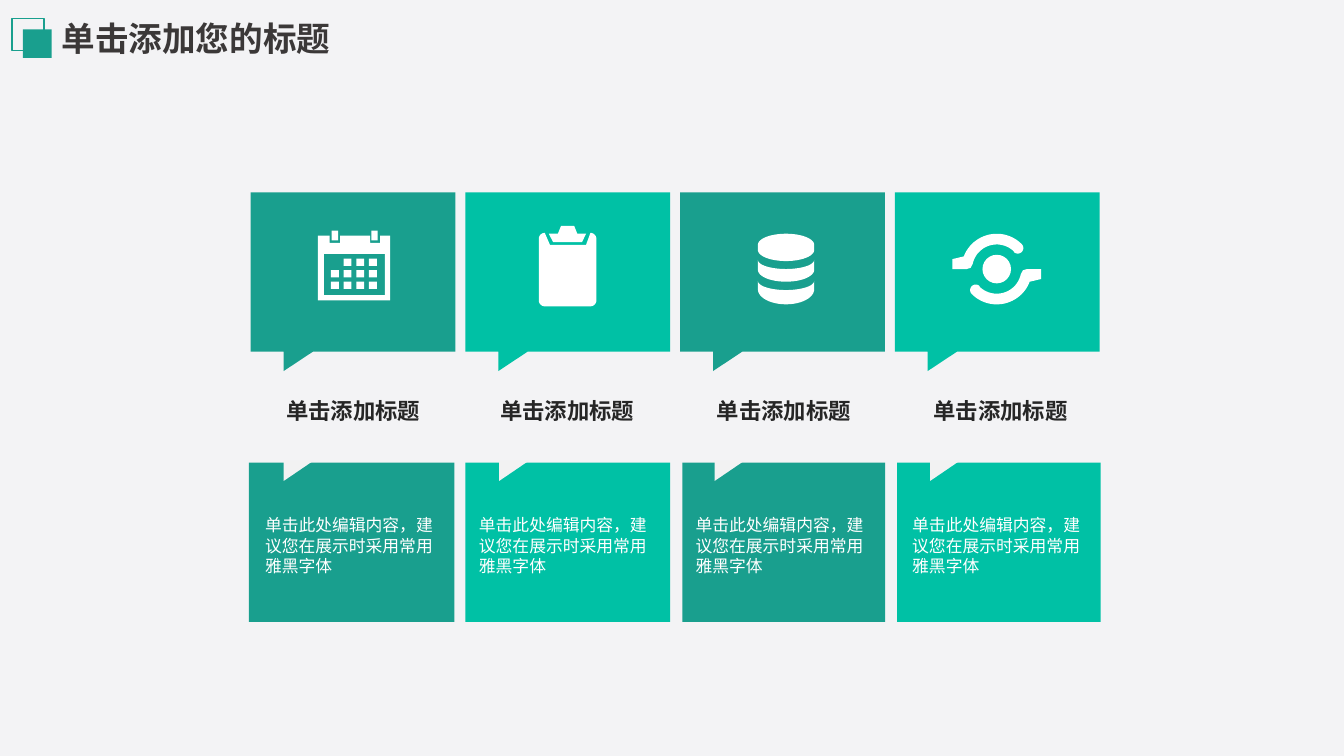
from math import cos, radians, sin

from pptx import Presentation
from pptx.dml.color import RGBColor
from pptx.enum.shapes import MSO_SHAPE as Shape
from pptx.enum.text import MSO_ANCHOR as Anchor, PP_ALIGN as Align
from pptx.util import Cm, Pt

TEAL = RGBColor(0x19, 0x9F, 0x8E)
MINT = RGBColor(0x00, 0xC1, 0xA5)
WHITE = RGBColor(0xFF, 0xFF, 0xFF)
BACKGROUND = RGBColor(0xF3, 0xF3, 0xF5)
NOTCH = RGBColor(0xF2, 0xF2, 0xF2)
TITLE = RGBColor(0x3B, 0x38, 0x38)
HEADING = RGBColor(0x26, 0x26, 0x26)
FONT = "Arial"

# All lengths below are centimetres.
CARD_LEFT, CARD_TOP, CARD_PITCH = 6.32, 4.85, 5.41
NOTCH_LEFT, NOTCH_PITCH = 7.15, 5.43
PANEL_TOP, PANEL_HEIGHT = 11.66, 4.01
BODY = "单击此处编辑内容，建议您在展示时采用常用雅黑字体"


def add_text(slide, text, left, top, width, height, size, color, bold=False,
             align=Align.LEFT, anchor=Anchor.TOP, inset=None):
    box = slide.shapes.add_textbox(Cm(left), Cm(top), Cm(width), Cm(height))
    frame = box.text_frame
    frame.word_wrap = True
    frame.vertical_anchor = anchor
    if inset is not None:
        frame.margin_left = frame.margin_right = Cm(inset)
        frame.margin_top = frame.margin_bottom = Cm(inset)
    paragraph = frame.paragraphs[0]
    paragraph.alignment = align
    run = paragraph.add_run()
    run.text = text
    run.font.name = FONT
    run.font.size = Pt(size)
    run.font.bold = bold
    run.font.color.rgb = color


def paint(shape, color):
    shape.shadow.inherit = False
    shape.fill.solid()
    shape.fill.fore_color.rgb = color
    shape.line.fill.background()


def add_block(slide, left, top, width, height, color):
    shape = slide.shapes.add_shape(Shape.RECTANGLE, Cm(left), Cm(top), Cm(width), Cm(height))
    paint(shape, color)
    return shape


def add_outline(slide, left, top, contours, color):
    """Fill closed contours whose points are relative to left and top."""
    builder = None
    for contour in contours:
        points = [(Cm(left + x), Cm(top + y)) for x, y in contour]
        if builder is None:
            builder = slide.shapes.build_freeform(*points[0])
        else:
            builder.move_to(*points[0])
        builder.add_line_segments(points[1:], close=True)
    paint(builder.convert_to_shape(), color)


def arc(x, y, radius_x, radius_y, start, end, steps=24):
    """Points on an ellipse; angles in degrees, clockwise from the right."""
    angles = [radians(start + (end - start) * i / steps) for i in range(steps + 1)]
    return [(x + radius_x * cos(a), y + radius_y * sin(a)) for a in angles]


def rectangle(left, top, right, bottom):
    return [(left, top), (right, top), (right, bottom), (left, bottom)]


def draw_calendar(slide, card_left, card_top):
    left, top = card_left + 1.69, card_top + 1.09
    body = [(0, 0), (0.3, 0), (0.3, 0.18), (0.56, 0.18), (0.56, 0), (1.32, 0),
            (1.32, 0.18), (1.57, 0.18), (1.57, 0), (1.82, 0), (1.82, 1.63), (0, 1.63)]
    add_outline(slide, left, top, [body, rectangle(0.15, 0.46, 1.69, 1.5)], WHITE)
    for ring in (0.35, 1.35):
        add_block(slide, left + ring, top - 0.13, 0.16, 0.25, WHITE)
    for row in range(3):
        for column in range(4):
            if row or column:
                add_block(slide, left + 0.33 + 0.32 * column, top + 0.58 + 0.29 * row,
                          0.2, 0.18, WHITE)


def draw_clipboard(slide, card_left, card_top):
    left, top = card_left + 1.85, card_top + 0.84
    width, head, foot, radius = 1.45, 0.18, 2.03, 0.15
    board = ([(1.3, head), (1.19, 0.48), (0.28, 0.48), (radius, head)]
             + arc(radius, head + radius, radius, radius, 270, 180)
             + arc(radius, foot - radius, radius, radius, 180, 90)
             + arc(width - radius, foot - radius, radius, radius, 90, 0)
             + arc(width - radius, head + radius, radius, radius, 0, -90))
    clip = [(1.09, 0.41), (1.19, 0.2), (0.97, 0.2), (0.89, 0), (0.56, 0),
            (0.48, 0.2), (0.25, 0.2), (0.36, 0.41)]
    add_outline(slide, left, top, [board], WHITE)
    add_outline(slide, left, top, [clip], WHITE)


def draw_database(slide, card_left, card_top):
    middle = 0.71
    contours = [arc(middle, 0.28, middle, 0.28, 180, 360) + arc(middle, 0.41, middle, 0.28, 0, 180)]
    for upper, lower, depth in ((0.66, 0.91, 0.3), (1.19, 1.4, 0.38)):
        contours.append(arc(middle, upper, middle, 0.23, 180, 0)
                        + arc(middle, lower, middle, depth, 0, 180))
    add_outline(slide, card_left + 1.96, card_top + 1.04, contours, WHITE)


def draw_orbit(slide, card_left, card_top):
    x, y = 1.12, 0.89
    arm = (arc(x, y, 0.89, 0.89, 201, 315)
           + arc(1.65, 0.36, 0.14, 0.14, 315, 495)
           + arc(x, y, 0.62, 0.62, 315, 192)
           + [(0.46, 0.86), (0.36, 0.89), (0, 0.89), (0, 0.64)])
    opposite_arm = [(2 * x - px, 2 * y - py) for px, py in arm]
    disc = arc(x, y, 0.36, 0.36, 0, 360)
    add_outline(slide, card_left + 1.45, card_top + 1.04, [arm, opposite_arm, disc], WHITE)


def draw_title(slide, left, top):
    add_block(slide, left + 0.28, top + 0.28, 0.72, 0.72, TEAL)
    frame = add_block(slide, left, top, 0.81, 0.81, TEAL)
    frame.fill.background()
    frame.line.color.rgb = TEAL
    frame.line.width = Pt(1)
    add_text(slide, "单击添加您的标题", left + 1, top - 0.13, 8.25, 1.28, 24, TITLE, bold=True)


def draw_card(slide, left, top, color, draw_icon):
    callout = [(0, 0), (5.16, 0), (5.16, 4.01), (1.57, 4.01), (0.83, 4.5), (0.83, 4.01), (0, 4.01)]
    add_outline(slide, left, top, [callout], color)
    draw_icon(slide, left, top)


def draw_panel(slide, left, width, notch_left, color):
    add_block(slide, left, PANEL_TOP, width, PANEL_HEIGHT, color)
    add_outline(slide, notch_left, PANEL_TOP - 0.05, [[(0, 0), (0, 0.51), (0.75, 0)]], NOTCH)


def draw_caption(slide, left):
    add_text(slide, "单击添加标题", left + 0.22, 9.88, 4.01, 0.94, 16, HEADING, bold=True,
             align=Align.CENTER, anchor=Anchor.MIDDLE)
    add_text(slide, BODY, left, 12.98, 4.45, 1.55, 12, WHITE, inset=0)


def main():
    presentation = Presentation()
    presentation.slide_width, presentation.slide_height = Cm(33.87), Cm(19.05)
    slide = presentation.slides.add_slide(presentation.slide_layouts[6])
    slide.background.fill.solid()
    slide.background.fill.fore_color.rgb = BACKGROUND
    draw_title(slide, 0.3, 0.46)
    columns = [
        (draw_calendar, TEAL, 6.27, 5.18, 6.68),
        (draw_clipboard, MINT, 11.73, 5.16, 12.07),
        (draw_database, TEAL, 17.2, 5.11, 17.53),
        (draw_orbit, MINT, 22.61, 5.13, 22.99),
    ]
    for i, (draw_icon, color, panel_left, panel_width, text_left) in enumerate(columns):
        draw_panel(slide, panel_left, panel_width, NOTCH_LEFT + NOTCH_PITCH * i, color)
        draw_card(slide, CARD_LEFT + CARD_PITCH * i, CARD_TOP, color, draw_icon)
        draw_caption(slide, text_left)
    presentation.save("out.pptx")


if __name__ == "__main__":
    main()
